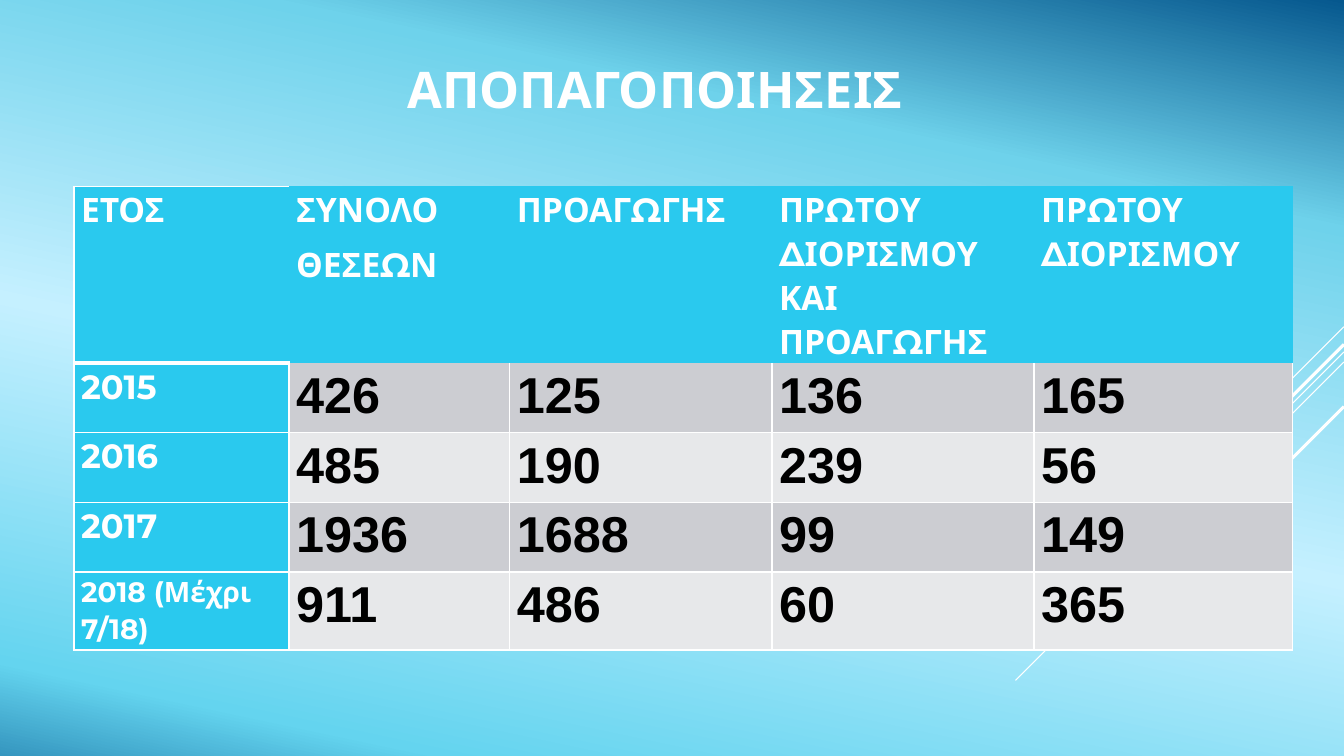
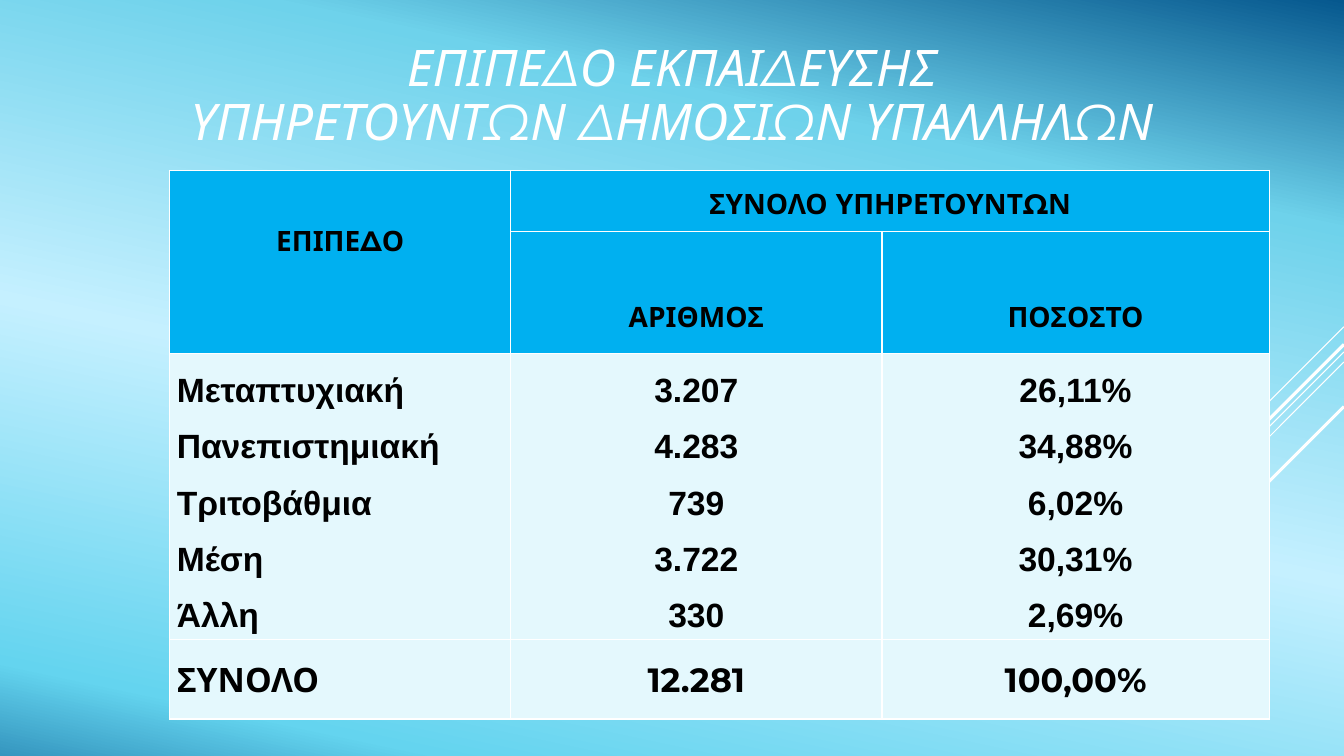
from dataclasses import dataclass, field
from typing import NamedTuple

import lxml.etree
import pptx
import pptx.dml.color
import pptx.enum.shapes
import pptx.enum.text
import pptx.oxml.ns
import pptx.util

GRID_COLUMNS = 160
GRID_ROWS = 90
UNIT = pptx.util.Inches(7.5) / GRID_ROWS
ALIGN = pptx.enum.text.PP_ALIGN
ALL_SIDES = "LRTB"


@dataclass(frozen=True)
class Theme:
    heading_font: str = "Montserrat"
    body_font: str = "Arial"
    white: str = "FFFFFF"
    black: str = "000000"
    turquoise: str = "2AC9EE"
    blue: str = "00B0F0"
    pale_blue: str = "E4F8FD"
    bands: tuple[str, str] = ("CCCDD2", "E7E8EA")
    gradient: tuple[tuple[int, str], ...] = (
        (0, "06588E"), (22, "6ED2EB"), (56, "C5F0FF"), (91, "64D4EF"), (100, "3596BF"))
    gradient_angle: int = 102
    large: int = 36
    medium: int = 24
    small: int = 20
    border: float = 1
    thick_border: float = 3


THEME = Theme()


class Box(NamedTuple):
    left: float
    top: float
    width: float
    height: float


class Ray(NamedTuple):
    top: float
    length: float
    weight: float


class TextStyle(NamedTuple):
    size: int
    font: str
    color: str
    bold: bool = True
    italic: bool = False


@dataclass(frozen=True)
class Cell:
    text: str
    style: TextStyle
    fill: str
    sides: str = ALL_SIDES
    bottom_border: float = THEME.border
    align: ALIGN = ALIGN.LEFT
    line_spacing: float = 1.07
    space_after: float = 8
    margin_top: float = 0.1
    span: tuple[int, int] = (1, 1)


@dataclass(frozen=True)
class TableSpec:
    left: float
    top: float
    columns: list[float]
    rows: list[float]
    cells: dict[tuple[int, int], Cell] = field(default_factory=dict)


RAYS = [Ray(38.9, 12, 0.75), Ray(41.9, 39.1, 0.75), Ray(43.1, 24.9, 0.75),
        Ray(41, 22.9, 2.25), Ray(48.4, 16.7, 2.25)]


def units(count: float) -> int:
    return round(count * UNIT)


def rgb(color: str) -> pptx.dml.color.RGBColor:
    return pptx.dml.color.RGBColor.from_string(color)


def add_element(parent, tag: str, **attributes: str):
    return lxml.etree.SubElement(parent, pptx.oxml.ns.qn(tag), attributes)


def format_paragraphs(text_frame, style: TextStyle, align: ALIGN,
                      line_spacing: float, space_after: float = 0) -> None:
    for paragraph in text_frame.paragraphs:
        paragraph.alignment = align
        paragraph.line_spacing = line_spacing
        paragraph.space_before = pptx.util.Pt(0)
        paragraph.space_after = pptx.util.Pt(space_after)
        paragraph.font.size = pptx.util.Pt(style.size)
        paragraph.font.name = style.font
        paragraph.font.bold = style.bold
        paragraph.font.italic = style.italic
        paragraph.font.color.rgb = rgb(style.color)


def set_background(master) -> None:
    fill = master.background.fill
    fill.gradient()
    fill.gradient_angle = 360 - THEME.gradient_angle
    stop_list = next(master.element.iter(pptx.oxml.ns.qn("a:gsLst")))
    for stop in list(stop_list):
        stop_list.remove(stop)
    for position, color in THEME.gradient:
        stop = add_element(stop_list, "a:gs", pos=str(position * 1000))
        add_element(stop, "a:srgbClr", val=color)


def add_rays(slide) -> None:
    for ray in RAYS:
        connector = slide.shapes.add_connector(
            pptx.enum.shapes.MSO_CONNECTOR.STRAIGHT,
            units(GRID_COLUMNS), units(ray.top),
            units(GRID_COLUMNS - ray.length), units(ray.top + ray.length))
        connector.line.color.rgb = rgb(THEME.white)
        connector.line.width = pptx.util.Pt(ray.weight)
        add_element(connector.element.spPr, "a:effectLst")


def set_borders(cell, spec: Cell) -> None:
    properties = cell._tc.get_or_add_tcPr()
    for position, side in enumerate(ALL_SIDES):
        weight = spec.bottom_border if side == "B" else THEME.border
        line = add_element(properties, f"a:ln{side}", w=str(pptx.util.Pt(weight)))
        if side in spec.sides:
            add_element(add_element(line, "a:solidFill"), "a:srgbClr", val=THEME.white)
        else:
            add_element(line, "a:noFill")
        properties.insert(position, line)


def add_table(slide, spec: TableSpec) -> None:
    table = slide.shapes.add_table(
        len(spec.rows), len(spec.columns), units(spec.left), units(spec.top),
        units(sum(spec.columns)), units(sum(spec.rows))).table
    table.first_row = False
    table.horz_banding = False
    for column, width in zip(table.columns, spec.columns):
        column.width = units(width)
    for row, height in zip(table.rows, spec.rows):
        row.height = units(height)
    for (row, column), content in spec.cells.items():
        cell = table.cell(row, column)
        height, width = content.span
        if content.span != (1, 1):
            cell.merge(table.cell(row + height - 1, column + width - 1))
        cell.margin_left = cell.margin_right = units(0.85)
        cell.margin_top = units(content.margin_top)
        cell.margin_bottom = 0
        cell.text_frame.text = content.text
        format_paragraphs(cell.text_frame, content.style, content.align,
                          content.line_spacing, content.space_after)
        for covered_row in range(row, row + height):
            for covered_column in range(column, column + width):
                covered = table.cell(covered_row, covered_column)
                covered.fill.solid()
                covered.fill.fore_color.rgb = rgb(content.fill)
                set_borders(covered, content)


def add_slide(presentation, title: str, box: Box, style: TextStyle, table: TableSpec) -> None:
    slide = presentation.slides.add_slide(presentation.slide_layouts[5])
    shape = slide.shapes.title
    shape.left, shape.top, shape.width, shape.height = map(units, box)
    shape.text_frame.text = title
    shape.text_frame.word_wrap = True
    shape.text_frame.auto_size = pptx.enum.text.MSO_AUTO_SIZE.NONE
    shape.text_frame.vertical_anchor = pptx.enum.text.MSO_ANCHOR.MIDDLE
    format_paragraphs(shape.text_frame, style, ALIGN.CENTER, 0.9)
    add_rays(slide)
    add_table(slide, table)


def positions_table() -> TableSpec:
    header = TextStyle(THEME.medium, THEME.heading_font, THEME.white)
    long_year = header._replace(size=THEME.small)
    number = TextStyle(THEME.large, THEME.body_font, THEME.black)
    headings = ["ΕΤΟΣ", "ΣΥΝΟΛΟ\nΘΕΣΕΩΝ", "ΠΡΟΑΓΩΓΗΣ",
                "ΠΡΩΤΟΥ ΔΙΟΡΙΣΜΟΥ ΚΑΙ ΠΡΟΑΓΩΓΗΣ", "ΠΡΩΤΟΥ ΔΙΟΡΙΣΜΟΥ"]
    years = [("2015", 426, 125, 136, 165), ("2016", 485, 190, 239, 56),
             ("2017", 1936, 1688, 99, 149), ("2018 (Μέχρι 7/18)", 911, 486, 60, 365)]
    cells = {(0, column): Cell(text, header, THEME.turquoise, sides="")
             for column, text in enumerate(headings)}
    cells[0, 0] = Cell(headings[0], header, THEME.turquoise, "LTB", THEME.thick_border)
    for row, (year, *counts) in enumerate(years, 1):
        sides = "LRB" if row == 1 else ALL_SIDES
        style = long_year if row == len(years) else header
        cells[row, 0] = Cell(year, style, THEME.turquoise, sides)
        for column, count in enumerate(counts, 1):
            cells[row, column] = Cell(str(count), number, THEME.bands[(row - 1) % 2], sides)
    return TableSpec(8.8, 22.2, [25.6, 26.3, 31.2, 31.2, 30.8],
                     [21, 8.3, 8.3, 8.3, 9.3], cells)


def education_table() -> TableSpec:
    header = TextStyle(THEME.small, THEME.heading_font, THEME.black)
    body = TextStyle(THEME.medium, THEME.body_font, THEME.black)
    total = body._replace(font=THEME.heading_font)
    levels = [("Μεταπτυχιακή", "3.207", "26,11%"), ("Πανεπιστημιακή", "4.283", "34,88%"),
              ("Τριτοβάθμια", "739", "6,02%"), ("Μέση", "3.722", "30,31%"),
              ("Άλλη", "330", "2,69%")]
    totals = ("ΣΥΝΟΛΟ", "12.281", "100,00%")

    def spaced(text: str, style: TextStyle, fill: str, align: ALIGN = ALIGN.CENTER,
               margin_top: float = 0, span: tuple[int, int] = (1, 1)) -> Cell:
        return Cell(text, style, fill, align=align, line_spacing=1.5, space_after=0,
                    margin_top=margin_top, span=span)

    cells = {
        (0, 0): spaced("ΕΠΙΠΕΔΟ", header, THEME.blue, margin_top=4.4, span=(2, 1)),
        (0, 1): spaced("ΣΥΝΟΛΟ ΥΠΗΡΕΤΟΥΝΤΩΝ", header, THEME.blue, span=(1, 2)),
        (1, 1): spaced("ΑΡΙΘΜΟΣ", header, THEME.blue, margin_top=6.1),
        (1, 2): spaced("ΠΟΣΟΣΤΟ", header, THEME.blue, margin_top=6.1),
    }
    for column, values in enumerate(zip(*levels)):
        align = ALIGN.CENTER if column else ALIGN.JUSTIFY
        cells[2, column] = spaced("\n".join(values), body, THEME.pale_blue, align)
        cells[3, column] = spaced(totals[column], total, THEME.pale_blue, align)
    return TableSpec(20.2, 20.3, [40.6, 44.2, 46.1], [7.3, 14.5, 34, 9.5], cells)


def main() -> None:
    presentation = pptx.Presentation()
    presentation.slide_width = units(GRID_COLUMNS)
    presentation.slide_height = units(GRID_ROWS)
    set_background(presentation.slide_master)
    title = TextStyle(THEME.large, THEME.heading_font, THEME.white)
    add_slide(presentation, "ΑΠΟΠΑΓΟΠΟΙΗΣΕΙΣ", Box(22, 1, 112, 20), title, positions_table())
    add_slide(presentation, "ΕΠΙΠΕΔΟ ΕΚΠΑΙΔΕΥΣΗΣ\vΥΠΗΡΕΤΟΥΝΤΩΝ ΔΗΜΟΣΙΩΝ ΥΠΑΛΛΗΛΩΝ",
              Box(8, 3.6, 144, 16), title._replace(bold=False, italic=True), education_table())
    presentation.save("out.pptx")


if __name__ == "__main__":
    main()
